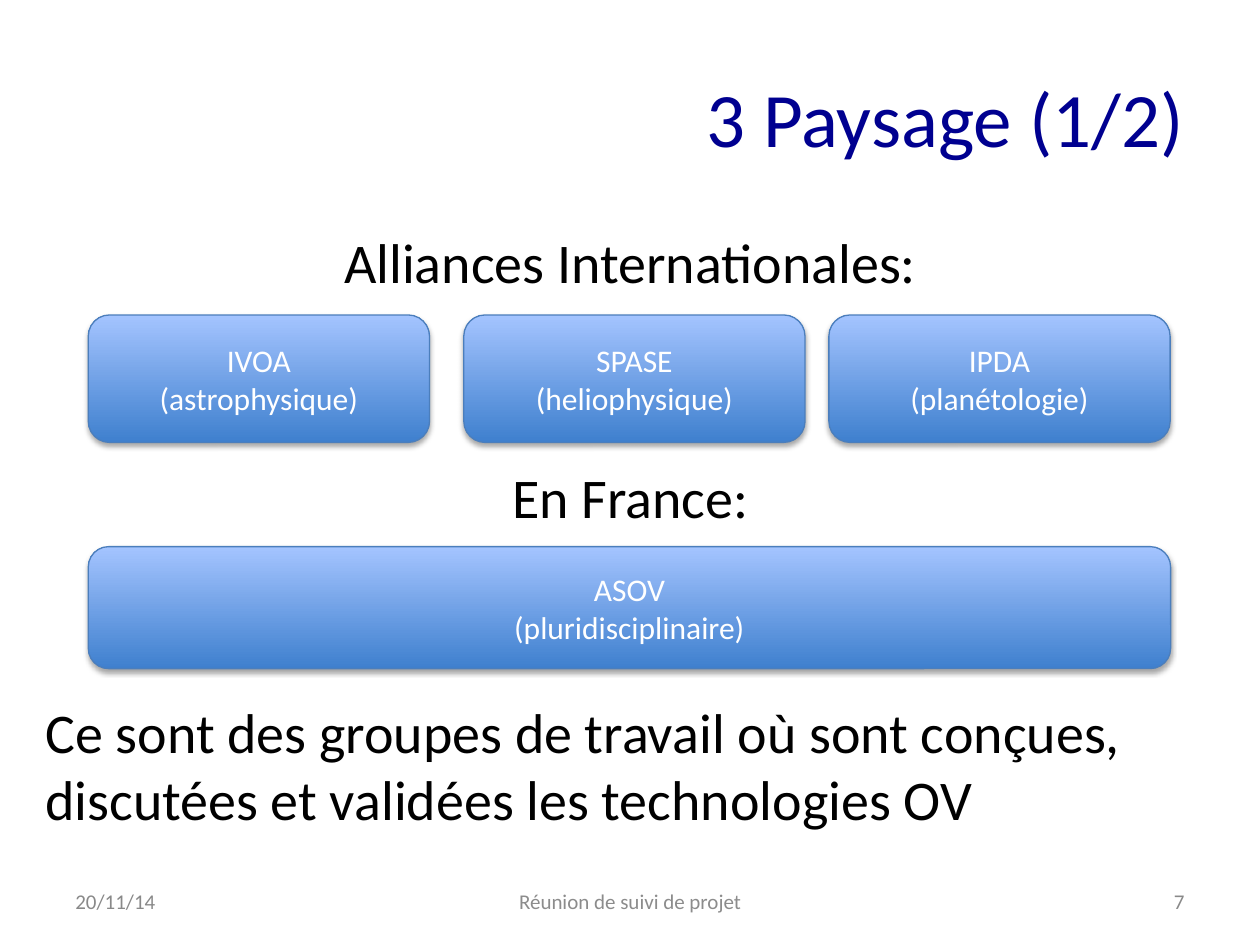
from lxml import etree
from pptx import Presentation
from pptx.dml.color import RGBColor
from pptx.enum import shapes, text
from pptx.oxml import ns
from pptx.util import Cm, Pt

COLORS = {
    "title": "000090", "body": "000000", "box_text": "FFFFFF",
    "box_bottom": "3F80CE", "box_top": "A4C4FF", "box_line": "4B7EBC",
    "shadow": "000000", "footer": "898989", "footer_center": "8C8C8C",
}
FONT = "Calibri"
ALIGN = text.PP_ALIGN
ANCHOR = text.MSO_ANCHOR


def color(name):
    return RGBColor.from_string(COLORS[name])


def place(shape, box):
    shape.left, shape.top, shape.width, shape.height = (Cm(value) for value in box)


def format_text(text_frame, size, color_name, alignment, anchor):
    text_frame.word_wrap = True
    text_frame.auto_size = text.MSO_AUTO_SIZE.NONE
    text_frame.vertical_anchor = anchor
    for paragraph in text_frame.paragraphs:
        paragraph.alignment = alignment
        for run in paragraph.runs:
            run.font.name = FONT
            run.font.size = Pt(size)
            run.font.color.rgb = color(color_name)


def add_title(slide, box):
    title = slide.shapes.title
    place(title, box)
    title.text_frame.text = "3 Paysage (1/2)"
    format_text(title.text_frame, 44, "title", ALIGN.RIGHT, ANCHOR.MIDDLE)


def add_body(slide, box):
    body = slide.placeholders[1]
    place(body, box)
    text_frame = body.text_frame
    text_frame.text = (
        "Alliances Internationales:\n"
        "En France:\n"
        "Ce sont des groupes de travail où sont conçues, "
        "discutées et validées les technologies OV"
    )
    for index, paragraph in enumerate(text_frame.paragraphs):
        properties = paragraph._p.get_or_add_pPr()
        properties.set("marL", "0")
        properties.set("indent", "0")
        etree.SubElement(properties, ns.qn("a:buNone"))
        # The space leaves room for the row of boxes above the paragraph
        paragraph.space_before = Pt(96 if index else 0)
    format_text(text_frame, 32, "body", ALIGN.CENTER, ANCHOR.TOP)
    text_frame.paragraphs[-1].alignment = ALIGN.LEFT


def add_shadow(shape):
    shape.shadow.inherit = False
    effects = shape._element.spPr.find(ns.qn("a:effectLst"))
    shadow = etree.SubElement(
        effects, ns.qn("a:outerShdw"), blurRad=str(Pt(3.1)), dist=str(Pt(1.8)),
        dir="5400000", rotWithShape="0")
    shade = etree.SubElement(shadow, ns.qn("a:srgbClr"), val=COLORS["shadow"])
    etree.SubElement(shade, ns.qn("a:alpha"), val="35000")


def add_group_box(slide, box, name, field):
    shape = slide.shapes.add_shape(
        shapes.MSO_SHAPE.ROUNDED_RECTANGLE, *(Cm(value) for value in box))
    shape.fill.gradient()
    shape.fill.gradient_angle = 90
    stops = zip(shape.fill.gradient_stops, (0, 1), ("box_bottom", "box_top"))
    for stop, position, color_name in stops:
        stop.position = position
        stop.color.rgb = color(color_name)
    shape.line.color.rgb = color("box_line")
    shape.line.width = Pt(0.75)
    add_shadow(shape)
    shape.text_frame.text = f"{name}\n({field})"
    format_text(shape.text_frame, 18, "box_text", ALIGN.CENTER, ANCHOR.MIDDLE)


def add_alliances(slide, box):
    left, top, _, height = box
    alliances = [
        (0, "IVOA", "astrophysique"),
        (7.57, "SPASE", "heliophysique"),
        (14.93, "IPDA", "planétologie"),
    ]
    for offset, name, field in alliances:
        add_group_box(slide, (left + offset, top, 6.88, height), name, field)


def add_footer(slide, box):
    left, top, width, height = box
    parts = [
        (0, 5.92, "20/11/14", "footer", ALIGN.LEFT),
        (7.41, 8.05, "Réunion de suivi de projet", "footer_center", ALIGN.CENTER),
        (width - 5.92, 5.92, "7", "footer", ALIGN.RIGHT),
    ]
    for offset, part_width, content, color_name, alignment in parts:
        text_box = slide.shapes.add_textbox(
            Cm(left + offset), Cm(top), Cm(part_width), Cm(height))
        text_box.text_frame.text = content
        format_text(text_box.text_frame, 12, color_name, alignment, ANCHOR.MIDDLE)


def main():
    presentation = Presentation()
    presentation.slide_width, presentation.slide_height = Cm(25.4), Cm(19.05)
    slide = presentation.slides.add_slide(presentation.slide_layouts[1])

    # Title and running text
    add_title(slide, (1.27, 0.76, 22.86, 3.18))
    add_body(slide, (0.66, 4.45, 24.1, 14.22))

    # Date, meeting and slide number
    add_footer(slide, (1.27, 17.65, 22.86, 1.02))

    # International alliances, then the French group
    add_alliances(slide, (1.78, 6.35, 21.82, 2.57))
    add_group_box(slide, (1.78, 11.02, 21.82, 2.46), "ASOV", "pluridisciplinaire")

    presentation.save("out.pptx")


if __name__ == "__main__":
    main()
